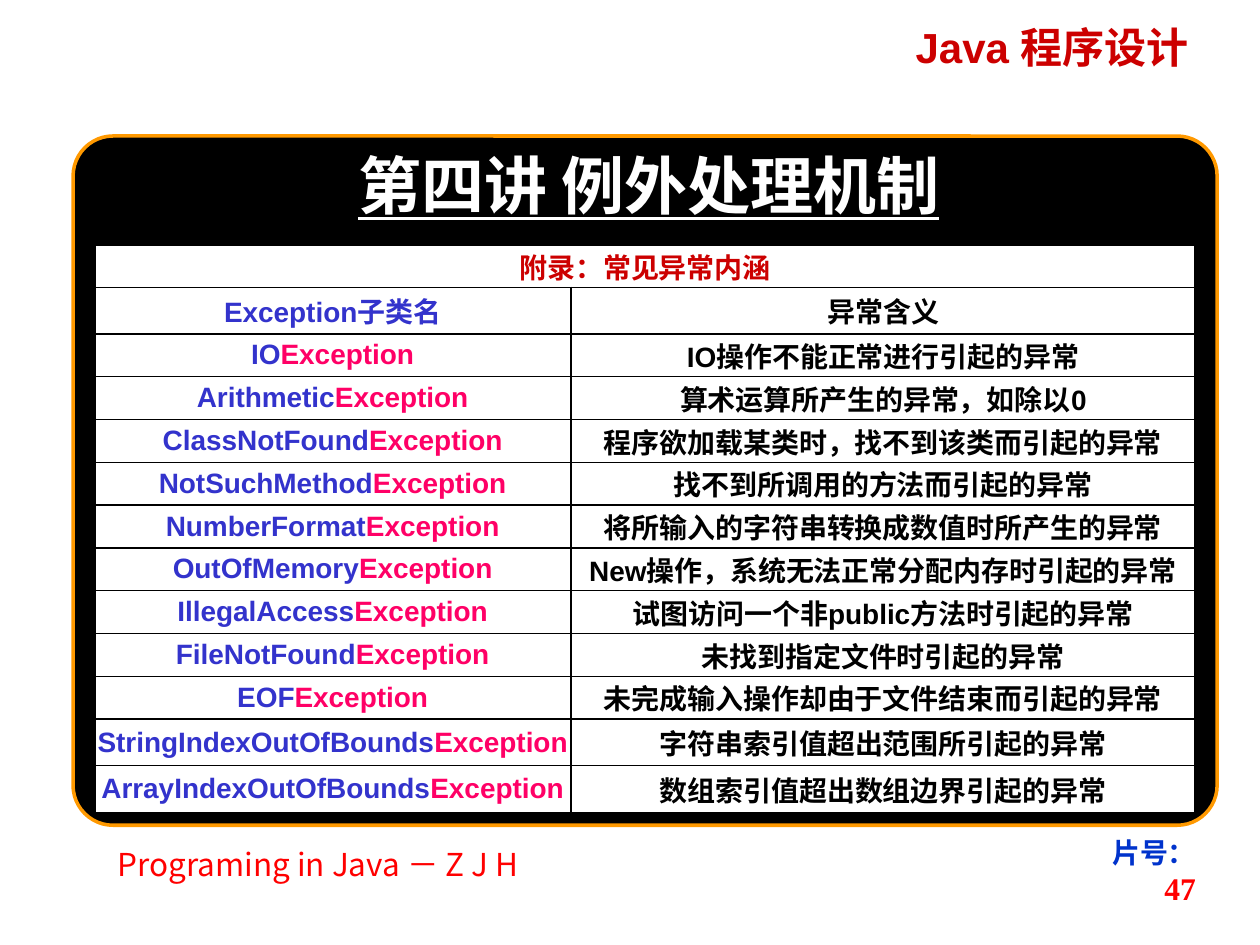
from lxml import etree
from pptx import Presentation
from pptx.dml.color import RGBColor
from pptx.enum.shapes import MSO_SHAPE
from pptx.enum.text import MSO_ANCHOR, PP_ALIGN
from pptx.oxml.ns import qn
from pptx.util import Inches, Pt

ROUND = MSO_SHAPE.ROUNDED_RECTANGLE
TOP, MIDDLE = MSO_ANCHOR.TOP, MSO_ANCHOR.MIDDLE
CENTER, RIGHT = PP_ALIGN.CENTER, PP_ALIGN.RIGHT

BLACK = RGBColor(0x00, 0x00, 0x00)
WHITE = RGBColor(0xFF, 0xFF, 0xFF)
DARK_RED = RGBColor(0xCC, 0x00, 0x00)
RED = RGBColor(0xFF, 0x00, 0x00)
PINK = RGBColor(0xFF, 0x00, 0x66)
ORANGE = RGBColor(0xFF, 0x99, 0x00)
BLUE = RGBColor(0x00, 0x33, 0xCC)
INDIGO = RGBColor(0x33, 0x33, 0xCC)

LATIN, SERIF, HAN = "Arial", "Times New Roman", "Noto Sans CJK SC"
SUFFIX = "Exception"
COLS = (3.78, 4.96)
LOW, TALL = 0.34, 0.37
THIN, THICK = 1, 2.25

ERRORS = [
    ("IO", "IO操作不能正常进行引起的异常"),
    ("Arithmetic", "算术运算所产生的异常，如除以0"),
    ("ClassNotFound", "程序欲加载某类时，找不到该类而引起的异常"),
    ("NotSuchMethod", "找不到所调用的方法而引起的异常"),
    ("NumberFormat", "将所输入的字符串转换成数值时所产生的异常"),
    ("OutOfMemory", "New操作，系统无法正常分配内存时引起的异常"),
    ("IllegalAccess", "试图访问一个非public方法时引起的异常"),
    ("FileNotFound", "未找到指定文件时引起的异常"),
    ("EOF", "未完成输入操作却由于文件结束而引起的异常"),
    ("StringIndexOutOfBounds", "字符串索引值超出范围所引起的异常"),
    ("ArrayIndexOutOfBounds", "数组索引值超出数组边界引起的异常"),
]


def add_text(frame, text, size=16, color=BLACK, font=LATIN, bold=True,
             line=False, align=CENTER):
    """Append one run to the first paragraph of a frame."""
    para = frame.paragraphs[0]
    para.alignment = align
    run = para.add_run()
    run.text = text
    face = run.font
    face.size, face.name = Pt(size), font
    face.bold, face.underline = bold, line
    face.color.rgb = color
    east = etree.Element(qn("a:ea"), typeface=HAN)
    run._r.rPr.find(qn("a:latin")).addnext(east)


def add_box(slide, left, top, width, height, wrap=True):
    box = slide.shapes.add_textbox(*map(Inches, (left, top, width, height)))
    box.text_frame.word_wrap = wrap
    return box.text_frame


def add_panel(slide):
    """Put the black rounded panel behind everything else."""
    panel = slide.shapes.add_shape(
        ROUND, *map(Inches, (0.58, 1.08, 9.08, 5.47)))
    panel.adjustments[0] = 0.058
    panel.shadow.inherit = False
    panel.fill.solid()
    panel.fill.fore_color.rgb = BLACK
    panel.line.color.rgb = ORANGE
    panel.line.width = Pt(2)
    slide.shapes._spTree.insert(2, panel._element)


def set_title(slide, text):
    title = slide.shapes.title
    title.left, title.top = Inches(0.9), Inches(1.11)
    title.width, title.height = Inches(8.5), Inches(0.58)
    frame = title.text_frame
    frame.vertical_anchor = TOP
    add_text(frame, text, size=36, color=WHITE, line=True)


def set_edges(cell, widths):
    """Draw the left, right, top and bottom borders, widths in points."""
    props = cell._tc.get_or_add_tcPr()
    for spot, (side, width) in enumerate(zip("LRTB", widths)):
        edge = etree.Element(qn(f"a:ln{side}"), w=str(Pt(width)))
        fill = etree.SubElement(edge, qn("a:solidFill"))
        etree.SubElement(fill, qn("a:srgbClr"), val=str(BLACK))
        props.insert(spot, edge)


def fill_cell(cell, runs, widths):
    cell.margin_left = cell.margin_right = 0
    cell.margin_top = cell.margin_bottom = 0
    cell.vertical_anchor = MIDDLE
    cell.fill.solid()
    cell.fill.fore_color.rgb = WHITE
    set_edges(cell, widths)
    for text, color in runs:
        add_text(cell.text_frame, text, color=color)


def add_grid(slide):
    rows = [([("Exception子类名", INDIGO)], [("异常含义", BLACK)])]
    rows += [([(name, INDIGO), (SUFFIX, PINK)], [(note, BLACK)])
             for name, note in ERRORS]
    count = len(rows) + 1
    highs = [LOW, TALL] + [LOW] * (count - 4) + [TALL] * 2
    shape = slide.shapes.add_table(
        count, len(COLS), Inches(0.75), Inches(1.94),
        Inches(sum(COLS)), Inches(sum(highs)))
    table = shape.table
    table.first_row = table.horz_banding = False
    for col, width in zip(table.columns, COLS):
        col.width = Inches(width)
    for row, high in zip(table.rows, highs):
        row.height = Inches(high)

    head, tail = table.cell(0, 0), table.cell(0, 1)
    head.merge(tail)
    edges = (THICK, THICK, THICK, THIN)
    fill_cell(head, [("附录：常见异常内涵", DARK_RED)], edges)
    fill_cell(tail, [], edges)
    for index, (name, note) in enumerate(rows, 1):
        fill_cell(table.cell(index, 0), name, (THICK, THIN, THIN, THIN))
        fill_cell(table.cell(index, 1), note, (THIN, THICK, THIN, THIN))


def main():
    deck = Presentation()
    deck.slide_width, deck.slide_height = Inches(10), Inches(7.5)
    slide = deck.slides.add_slide(deck.slide_layouts[5])

    add_panel(slide)
    set_title(slide, "第四讲 例外处理机制")
    add_text(add_box(slide, 6.74, 0.12, 3.22, 0.5), "Java 程序设计",
             size=24, color=DARK_RED)
    add_text(add_box(slide, 0.67, 6.66, 3.71, 0.25, wrap=False),
             "Programing in Java － Z J H",
             size=18, color=RED, font=HAN, bold=False)
    page = add_box(slide, 8.42, 6.58, 1.17, 0.5)
    page.margin_left = Inches(0.3)
    add_text(page, "片号：", color=BLUE, font=SERIF, align=RIGHT)
    add_text(page, "47", size=18, color=RED, font=SERIF, align=RIGHT)
    add_grid(slide)

    deck.save("out.pptx")


if __name__ == "__main__":
    main()
